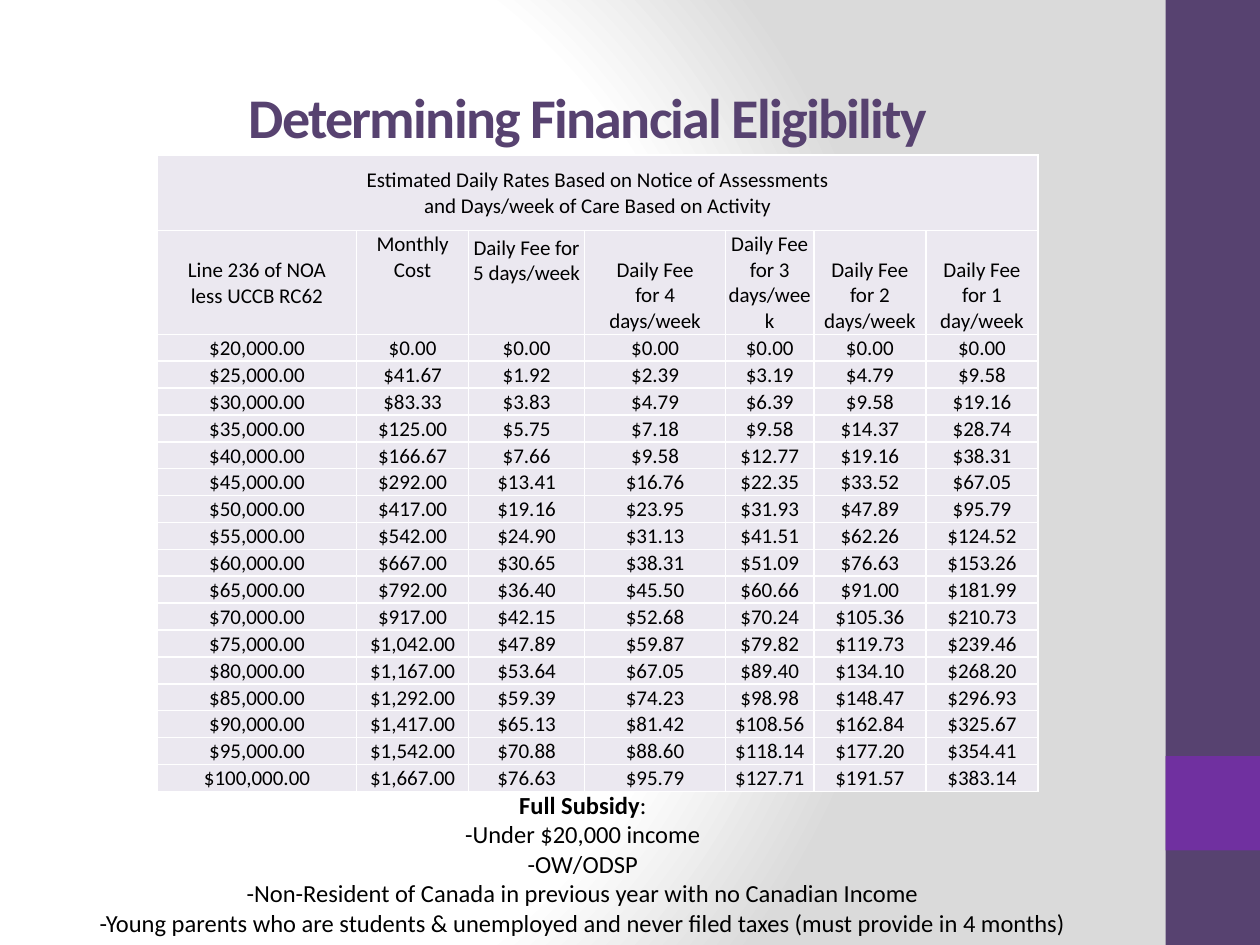
from lxml.etree import SubElement
from pptx import Presentation
from pptx.dml.color import RGBColor
from pptx.enum.shapes import MSO_SHAPE
from pptx.enum.text import MSO_ANCHOR, PP_ALIGN
from pptx.oxml.ns import qn
from pptx.util import Inches, Pt

WIDTH, HEIGHT = Inches(10), Inches(7.5)
FONT = "Calibri"
PLUM = RGBColor(0x57, 0x42, 0x70)
PURPLE = RGBColor(0x70, 0x30, 0xA0)
LILAC = RGBColor(0xEB, 0xE8, 0xF0)
WHITE = RGBColor(0xFF, 0xFF, 0xFF)
GREY = RGBColor(0xDA, 0xDA, 0xDA)
BLACK = RGBColor(0, 0, 0)

COLUMN_WIDTHS = (1.58, 0.89, 0.92, 1.12, 0.7, 0.89, 0.89)
ROW_HEIGHTS = (0.6, 0.76) + (0.2,) * 17
TABLE_TITLE = "Estimated Daily Rates Based on Notice of Assessments\nand Days/week of Care Based on Activity"
# Heading text, anchor, space below the text in inches
HEADINGS = [
    ("Line 236 of NOA\nless UCCB RC62", MSO_ANCHOR.BOTTOM, 0.2),
    ("Monthly\nCost", MSO_ANCHOR.TOP, 0),
    ("Daily Fee for\n5 days/week", MSO_ANCHOR.BOTTOM, 0.38),
    ("Daily Fee\nfor 4\ndays/week", MSO_ANCHOR.BOTTOM, 0),
    ("Daily Fee\nfor 3\ndays/week", MSO_ANCHOR.BOTTOM, 0),
    ("Daily Fee\nfor 2\ndays/week", MSO_ANCHOR.BOTTOM, 0),
    ("Daily Fee\nfor 1\nday/week", MSO_ANCHOR.BOTTOM, 0),
]
# Monthly cost, then daily fee for 5, 4, 3, 2 and 1 days; income rises by a fixed step
FIRST_INCOME, INCOME_STEP = 20000, 5000
RATES = [
    (0, 0, 0, 0, 0, 0),
    (41.67, 1.92, 2.39, 3.19, 4.79, 9.58),
    (83.33, 3.83, 4.79, 6.39, 9.58, 19.16),
    (125, 5.75, 7.18, 9.58, 14.37, 28.74),
    (166.67, 7.66, 9.58, 12.77, 19.16, 38.31),
    (292, 13.41, 16.76, 22.35, 33.52, 67.05),
    (417, 19.16, 23.95, 31.93, 47.89, 95.79),
    (542, 24.90, 31.13, 41.51, 62.26, 124.52),
    (667, 30.65, 38.31, 51.09, 76.63, 153.26),
    (792, 36.40, 45.50, 60.66, 91.00, 181.99),
    (917, 42.15, 52.68, 70.24, 105.36, 210.73),
    (1042, 47.89, 59.87, 79.82, 119.73, 239.46),
    (1167, 53.64, 67.05, 89.40, 134.10, 268.20),
    (1292, 59.39, 74.23, 98.98, 148.47, 296.93),
    (1417, 65.13, 81.42, 108.56, 162.84, 325.67),
    (1542, 70.88, 88.60, 118.14, 177.20, 354.41),
    (1667, 76.63, 95.79, 127.71, 191.57, 383.14),
]
SUBSIDY_LINES = [
    [("Full Subsidy", True), (":", False)],
    [("-Under $20,000 income", False)],
    [("-OW/ODSP", False)],
    [("-Non-Resident of Canada in previous year with no Canadian Income", False)],
    [("-Young parents who are students & unemployed and never filed taxes "
      "(must provide in 4 months)", False)],
]


def add_run(paragraph, text, size, color=BLACK, bold=False):
    paragraph.alignment = PP_ALIGN.CENTER
    run = paragraph.add_run()
    run.text = text
    run.font.name = FONT
    run.font.size = Pt(size)
    run.font.bold = bold
    run.font.color.rgb = color
    return run


def set_background(slide):
    properties = slide.background.fill
    properties.gradient()
    gradient = slide.background._cSld.find(".//" + qn("a:gradFill"))
    for child in list(gradient):
        gradient.remove(child)
    stops = SubElement(gradient, qn("a:gsLst"))
    for position, color in ((0, WHITE), (75, WHITE), (100, GREY)):
        stop = SubElement(stops, qn("a:gs"), pos=str(position * 1000))
        SubElement(stop, qn("a:srgbClr"), val=str(color))
    circle = SubElement(gradient, qn("a:path"))
    circle.set("path", "circle")
    SubElement(circle, qn("a:fillToRect"), l="20000", t="50000", r="100000", b="50000")


def add_band(slide, top_share, height_share, color):
    left = int(WIDTH * 0.925)
    shape = slide.shapes.add_shape(MSO_SHAPE.RECTANGLE, left, int(HEIGHT * top_share),
                                   WIDTH - left, int(HEIGHT * height_share))
    shape.shadow.inherit = False
    shape.fill.solid()
    shape.fill.fore_color.rgb = color
    shape.line.fill.background()


def set_title(slide):
    title = slide.shapes.title
    title.left, title.top = Inches(0.5), Inches(0.3)
    title.width, title.height = Inches(8.33), Inches(1.25)
    title.text_frame.vertical_anchor = MSO_ANCHOR.MIDDLE
    run = add_run(title.text_frame.paragraphs[0], "Determining Financial Eligibility",
                  32, PLUM, True)
    run.font._element.set("spc", "-100")


def add_borders(cell):
    properties = cell._tc.get_or_add_tcPr()
    for index, side in enumerate(("a:lnL", "a:lnR", "a:lnT", "a:lnB")):
        line = properties.makeelement(qn(side), {"w": str(Pt(1))})
        fill = SubElement(line, qn("a:solidFill"))
        SubElement(fill, qn("a:srgbClr"), val=str(WHITE))
        properties.insert(index, line)


def fill_cell(cell, text, anchor=MSO_ANCHOR.BOTTOM, space_below=0):
    cell.fill.solid()
    cell.fill.fore_color.rgb = LILAC
    add_borders(cell)
    cell.margin_left = cell.margin_right = cell.margin_top = Inches(0.01)
    cell.margin_bottom = Inches(space_below)
    cell.vertical_anchor = anchor
    paragraph = cell.text_frame.paragraphs[0]
    for index, line in enumerate(text.split("\n")):
        if index:
            paragraph.add_line_break()
        add_run(paragraph, line, 12)


def add_rate_table(slide):
    frame = slide.shapes.add_table(len(ROW_HEIGHTS), len(COLUMN_WIDTHS), Inches(1.25),
                                   Inches(1.23), Inches(7), Inches(4.99))
    table = frame.table
    table.first_row = table.horz_banding = False
    for column, width in zip(table.columns, COLUMN_WIDTHS):
        column.width = Inches(width)
    for row, height in zip(table.rows, ROW_HEIGHTS):
        row.height = Inches(height)

    # Heading rows
    table.cell(0, 0).merge(table.cell(0, len(COLUMN_WIDTHS) - 1))
    fill_cell(table.cell(0, 0), TABLE_TITLE, MSO_ANCHOR.MIDDLE)
    for column, heading in enumerate(HEADINGS):
        fill_cell(table.cell(1, column), *heading)

    # Income and rates
    for index, rates in enumerate(RATES):
        income = FIRST_INCOME + index * INCOME_STEP
        for column, amount in enumerate((income, *rates)):
            fill_cell(table.cell(index + 2, column), f"${amount:,.2f}")


def add_subsidy_note(slide):
    box = slide.shapes.add_textbox(Inches(0.25), Inches(6.22), Inches(8.75), Inches(1.28))
    text_frame = box.text_frame
    text_frame.word_wrap = True
    for index, line in enumerate(SUBSIDY_LINES):
        paragraph = text_frame.add_paragraph() if index else text_frame.paragraphs[0]
        for text, bold in line:
            add_run(paragraph, text, 14, bold=bold)


def main():
    presentation = Presentation()
    presentation.slide_width, presentation.slide_height = WIDTH, HEIGHT
    slide = presentation.slides.add_slide(presentation.slide_layouts[5])
    set_background(slide)
    # Side bands
    add_band(slide, 0, 1, PLUM)
    add_band(slide, 0.8, 0.1, PURPLE)
    # Content
    set_title(slide)
    add_rate_table(slide)
    add_subsidy_note(slide)
    presentation.save("out.pptx")


if __name__ == "__main__":
    main()
